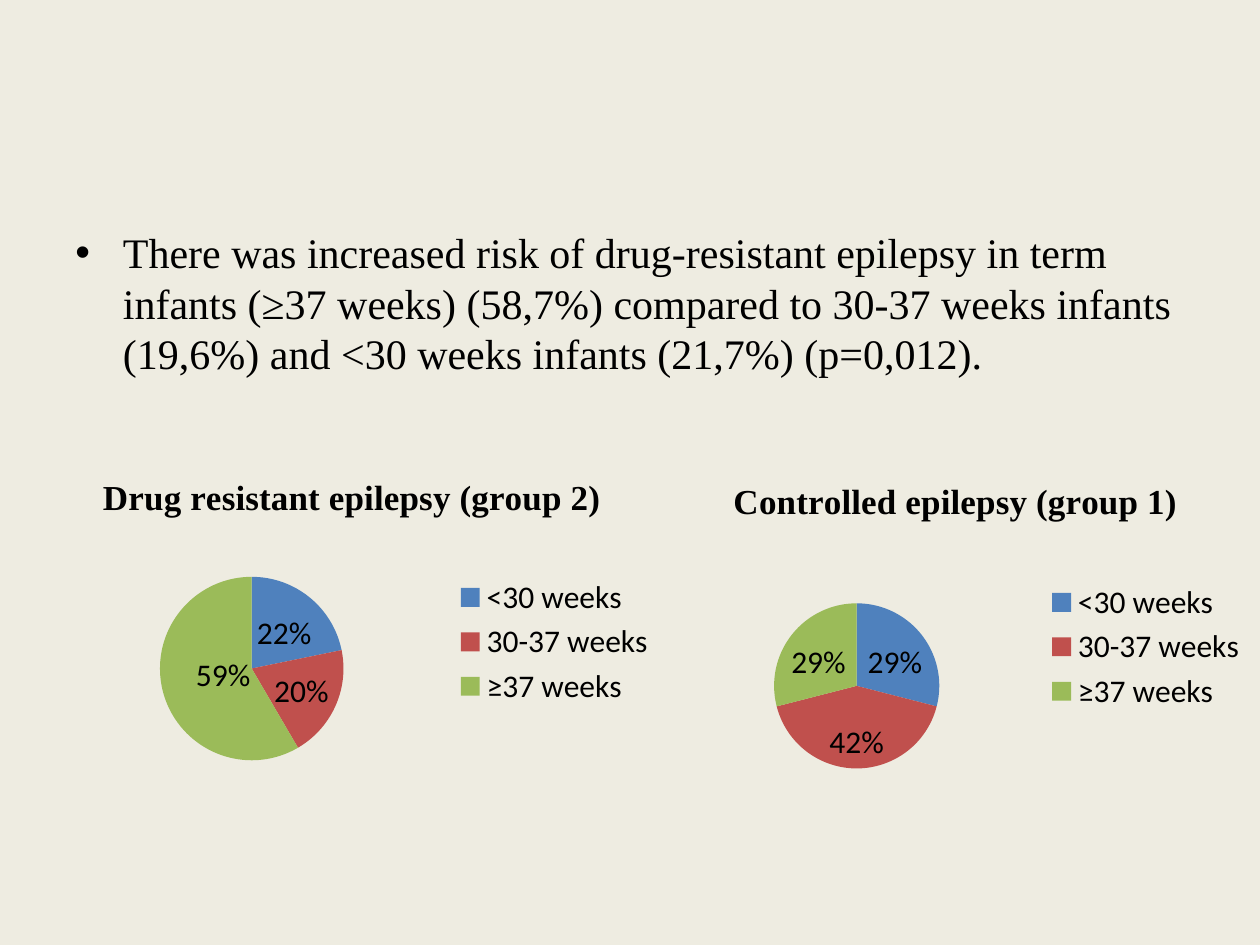
from copy import deepcopy

from lxml.etree import SubElement
from pptx import Presentation
from pptx.chart.data import CategoryChartData
from pptx.dml.color import RGBColor
from pptx.enum.chart import XL_CHART_TYPE, XL_LABEL_POSITION, XL_LEGEND_POSITION
from pptx.oxml import parse_xml
from pptx.oxml.ns import nsdecls, qn
from pptx.util import Cm, Pt

COLORS = {
    "background": "EEECE1",
    "text": "000000",
    "<30 weeks": "4F81BD",
    "30-37 weeks": "C0504D",
    "≥37 weeks": "9BBB59",
}
AGES = ["<30 weeks", "30-37 weeks", "≥37 weeks"]
SERIF = "Times New Roman"
SANS = "Calibri"
FINDING = (
    "There was increased risk of drug-resistant epilepsy in term infants "
    "(≥37 weeks) (58,7%) compared to 30-37 weeks infants (19,6%) and "
    "<30 weeks infants (21,7%) (p=0,012)."
)
GROUPS = [
    {
        "title": "Drug resistant epilepsy (group 2)",
        "shares": [22, 20, 59],
        "box": (0.58, 9.32, 12.9, 7.24),
        "title_at": (1.37, 0.12),
        "pie": (2.64, 2.31, 3.7),
        "label_shifts": {0: (0.01, 0.03), 1: (0, 0.02), 2: (0.04, 0.01)},
    },
    {
        "title": "Controlled epilepsy (group 1)",
        "shares": [29, 42, 29],
        "box": (13.11, 9.32, 12.29, 7.44),
        "title_at": (1.55, 0.2),
        "pie": (2.49, 2.84, 3.33),
        "label_shifts": {0: (0.01, 0.01), 2: (-0.01, 0.01)},
    },
]


def color(name):
    return RGBColor.from_string(COLORS[name])


def style_font(font, face, size, bold=False):
    font.name = face
    font.size = Pt(size)
    font.bold = bold
    font.color.rgb = color("text")


def manual_layout(**settings):
    layout = parse_xml(f"<c:layout {nsdecls('c')}><c:manualLayout/></c:layout>")
    for tag, value in settings.items():
        SubElement(layout[0], qn(f"c:{tag}")).set("val", str(value))
    return layout


def drop_layout(element):
    for layout in element.findall(qn("c:layout")):
        element.remove(layout)


def add_finding(slide, left, top, width, height):
    body = slide.shapes.add_textbox(Cm(left), Cm(top), Cm(width), Cm(height))
    frame = body.text_frame
    frame.word_wrap = True
    paragraph = frame.paragraphs[0]
    paragraph.space_before = Pt(4.8)
    properties = paragraph._p.get_or_add_pPr()
    properties.set("marL", str(Cm(0.96)))
    properties.set("indent", str(-Cm(0.96)))
    SubElement(properties, qn("a:buFont")).set("typeface", "Arial")
    SubElement(properties, qn("a:buChar")).set("char", "•")
    run = paragraph.add_run()
    run.text = FINDING
    style_font(run.font, SERIF, 24)


def place_title(title, position, width, height):
    left, top = position
    drop_layout(title._element)
    title._element.find(qn("c:tx")).addnext(manual_layout(
        xMode="edge", yMode="edge",
        x=round(left / width, 3), y=round(top / height, 3),
    ))


def place_pie(chart, pie, width, height):
    left, top, diameter = pie
    plot_area = chart._chartSpace.chart.plotArea
    drop_layout(plot_area)
    plot_area.insert(0, manual_layout(
        layoutTarget="inner", xMode="edge", yMode="edge",
        x=round(left / width, 3), y=round(top / height, 3),
        w=round(diameter / width, 3), h=round(diameter / height, 3),
    ))


def shift_labels(labels, shifts):
    shared = [part for part in labels._element if part.tag != qn("c:showLeaderLines")]
    for position, (point, (x, y)) in enumerate(shifts.items()):
        label = parse_xml(f'<c:dLbl {nsdecls("c")}><c:idx val="{point}"/></c:dLbl>')
        label.append(manual_layout(x=x, y=y))
        label.extend(deepcopy(shared))
        labels._element.insert(position, label)


def add_group_pie(slide, group):
    left, top, width, height = group["box"]
    data = CategoryChartData()
    data.categories = AGES
    data.add_series(group["title"], group["shares"])
    chart = slide.shapes.add_chart(
        XL_CHART_TYPE.PIE, Cm(left), Cm(top), Cm(width), Cm(height), data
    ).chart
    style_font(chart.font, SANS, 18)

    chart.has_title = True
    title = chart.chart_title
    title.include_in_layout = False
    run = title.text_frame.paragraphs[0].add_run()
    run.text = group["title"]
    style_font(run.font, SERIF, 20, bold=True)
    place_title(title, group["title_at"], width, height)

    chart.has_legend = True
    chart.legend.position = XL_LEGEND_POSITION.RIGHT
    chart.legend.include_in_layout = False
    style_font(chart.legend.font, SANS, 18)

    chart.plots[0].vary_by_categories = True
    series = chart.plots[0].series[0]
    for index, age in enumerate(AGES):
        fill = series.points[index].format.fill
        fill.solid()
        fill.fore_color.rgb = color(age)

    labels = series.data_labels
    labels.show_value = True
    labels.number_format = '0"%"'
    labels.number_format_is_linked = False
    labels.position = XL_LABEL_POSITION.INSIDE_END
    style_font(labels.font, SANS, 18)
    shift_labels(labels, group["label_shifts"])
    place_pie(chart, group["pie"], width, height)


def main():
    deck = Presentation()
    deck.slide_width = Cm(25.4)
    deck.slide_height = Cm(19.05)
    slide = deck.slides.add_slide(deck.slide_layouts[6])
    background = slide.background.fill
    background.solid()
    background.fore_color.rgb = color("background")
    add_finding(slide, 1.27, 4.45, 22.86, 12.57)
    for group in GROUPS:
        add_group_pie(slide, group)
    deck.save("out.pptx")


if __name__ == "__main__":
    main()
